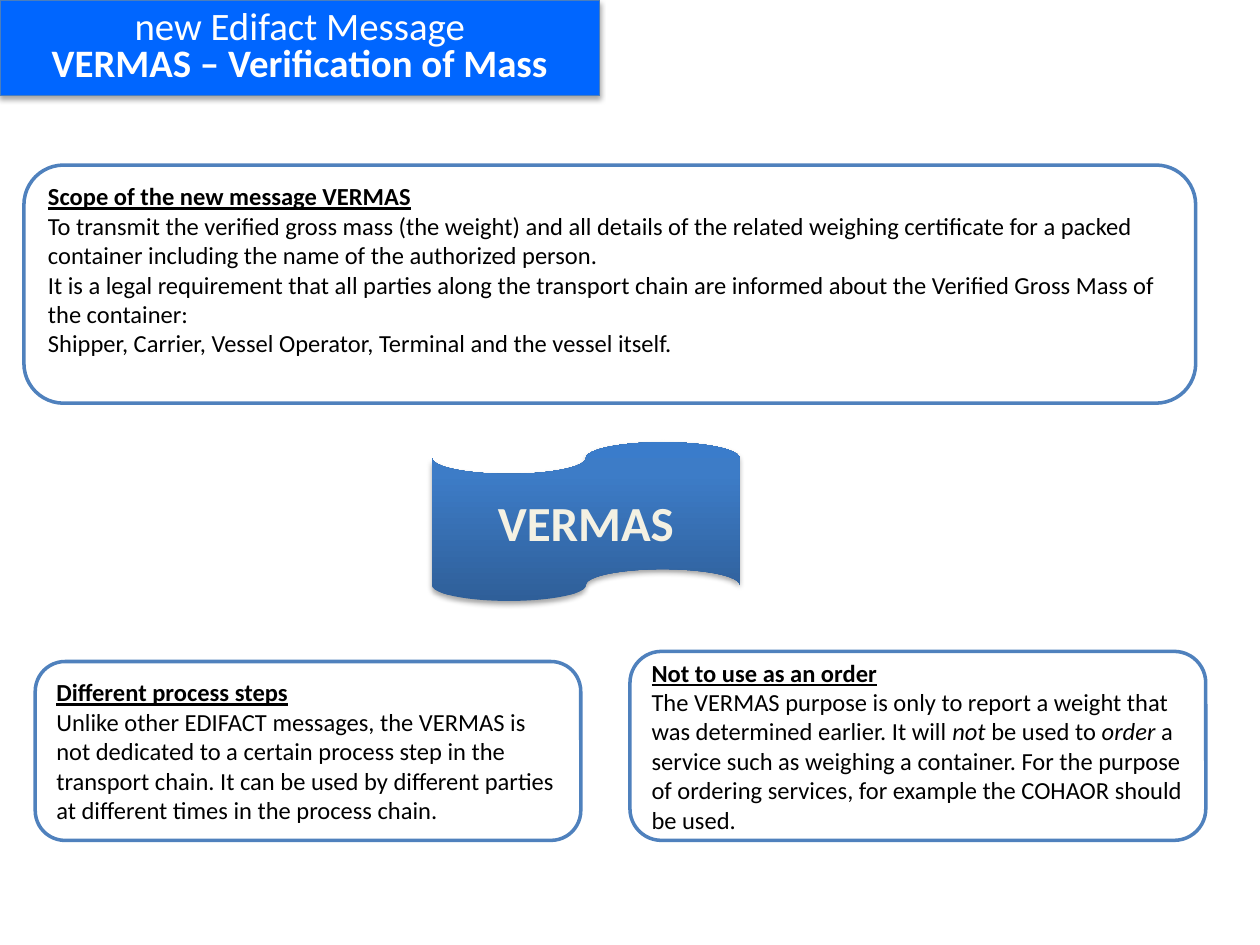
import lxml.etree
import pptx
import pptx.dml.color
import pptx.enum.shapes
import pptx.enum.text
import pptx.oxml
import pptx.oxml.ns
import pptx.util

SHAPE = pptx.enum.shapes.MSO_SHAPE
ALIGN = pptx.enum.text.PP_ALIGN
Inches = pptx.util.Inches
Pt = pptx.util.Pt

THEME = {
    "font": "Calibri",
    "banner": "0066FF",
    "banner_edge": "4B7EBC",
    "banner_text": "FFFFFF",
    "panel": "FFFFFF",
    "panel_edge": "4F81BD",
    "panel_text": "000000",
    "tape_text": "F4F1E3",
    "tape_stops": [(0, "2F5F99"), (80, "3D7CC7"), (100, "3A7CCB")],
    "banner_size": 22.2,
    "panel_size": 14,
    "tape_size": 28,
}

MESSAGE = "VERMAS"
TITLE = ["new Edifact Message", "VERMAS – Verification of Mass"]
PANELS = [
    {
        "at": (0.19, 1.31, 9.3, 1.89),
        "bottom_inset": 0.28,
        "heading": "Scope of the new message VERMAS",
        "body": [
            "To transmit the verified gross mass (the weight) and all details of the related "
            "weighing certificate for a packed container including the name of the authorized person.",
            "It is a legal requirement that all parties along the transport chain are informed "
            "about the Verified Gross Mass of the container:",
            "Shipper, Carrier, Vessel Operator, Terminal and the vessel itself.",
        ],
    },
    {
        "at": (0.28, 5.25, 4.33, 1.42),
        "bottom_inset": 0.05,
        "heading": "Different process steps",
        "body": [
            "Unlike other EDIFACT messages, the VERMAS is not dedicated to a certain process "
            "step in the transport chain. It can be used by different parties at different "
            "times in the process chain.",
        ],
    },
    {
        "at": (5, 5.17, 4.57, 1.5),
        "bottom_inset": 0.05,
        "heading": "Not to use as an order",
        "body": [
            "The VERMAS purpose is only to report a weight that was determined earlier. It will "
            "*not* be used to *order* a service such as weighing a container. For the purpose of "
            "ordering services, for example the COHAOR should be used.",
        ],
    },
]


def rgb(name):
    return pptx.dml.color.RGBColor.from_string(THEME[name])


def add_block(slide, preset, at, fill=None, edge=None, edge_width=0):
    block = slide.shapes.add_shape(preset, *map(Inches, at))
    block.shadow.inherit = False
    if fill:
        block.fill.solid()
        block.fill.fore_color.rgb = rgb(fill)
    if edge:
        block.line.color.rgb = rgb(edge)
        block.line.width = Pt(edge_width)
    else:
        block.line.fill.background()
    block.text_frame.word_wrap = True
    block.text_frame.vertical_anchor = pptx.enum.text.MSO_ANCHOR.MIDDLE
    return block


def add_soft_shadow(block):
    effects = block._element.spPr.find(pptx.oxml.ns.qn("a:effectLst"))
    effects.append(pptx.oxml.parse_xml(
        f'<a:outerShdw {pptx.oxml.ns.nsdecls("a")} blurRad="{Pt(3.1)}" dist="{Pt(1.8)}" '
        'dir="5400000" rotWithShape="0"><a:srgbClr val="000000">'
        '<a:alpha val="35000"/></a:srgbClr></a:outerShdw>'))


def set_gradient(block, stops):
    block.fill.gradient()
    block.fill.gradient_angle = 90
    stop_list = block._element.spPr.find(".//" + pptx.oxml.ns.qn("a:gsLst"))
    for old_stop in list(stop_list):
        stop_list.remove(old_stop)
    for share, colour in stops:
        stop = lxml.etree.SubElement(stop_list, pptx.oxml.ns.qn("a:gs"), pos=str(share * 1000))
        lxml.etree.SubElement(stop, pptx.oxml.ns.qn("a:srgbClr"), val=colour)


def style(paragraph, role, align, bold=False, underline=False):
    paragraph.alignment = align
    for run in paragraph.runs:
        run.font.name = THEME["font"]
        run.font.size = Pt(THEME[role + "_size"])
        run.font.color.rgb = rgb(role + "_text")
        run.font.bold = bold
        run.font.underline = underline


def add_tape(slide):
    tape = add_block(slide, SHAPE.FLOWCHART_PUNCHED_TAPE, (3.43, 3.51, 2.44, 1.26))
    set_gradient(tape, THEME["tape_stops"])
    add_soft_shadow(tape)
    tape.text_frame.text = MESSAGE
    style(tape.text_frame.paragraphs[0], "tape", ALIGN.CENTER, bold=True)


def add_banner(slide):
    banner = add_block(slide, SHAPE.RECTANGLE, (0, 0, 4.76, 0.76), "banner", "banner_edge", 0.75)
    add_soft_shadow(banner)
    banner.text_frame.text = "\n".join(TITLE)
    for row, line in enumerate(banner.text_frame.paragraphs):
        line.line_spacing = 0.8
        style(line, "banner", ALIGN.CENTER, bold=row > 0)


def add_panel(slide, panel):
    box = add_block(slide, SHAPE.ROUNDED_RECTANGLE, panel["at"], "panel", "panel_edge", 2)
    frame = box.text_frame
    frame.margin_bottom = Inches(panel["bottom_inset"])
    frame.text = panel["heading"]
    style(frame.paragraphs[0], "panel", ALIGN.LEFT, bold=True, underline=True)
    for sentence in panel["body"]:
        paragraph = frame.add_paragraph()
        for part, words in enumerate(sentence.split("*")):
            run = paragraph.add_run()
            run.text = words
            run.font.italic = part % 2 == 1
        style(paragraph, "panel", ALIGN.LEFT)


def main():
    deck = pptx.Presentation()
    deck.slide_width, deck.slide_height = Inches(10), Inches(7.5)
    slide = deck.slides.add_slide(deck.slide_layouts[6])
    add_tape(slide)
    add_banner(slide)
    for panel in PANELS:
        add_panel(slide, panel)
    deck.save("out.pptx")


if __name__ == "__main__":
    main()
